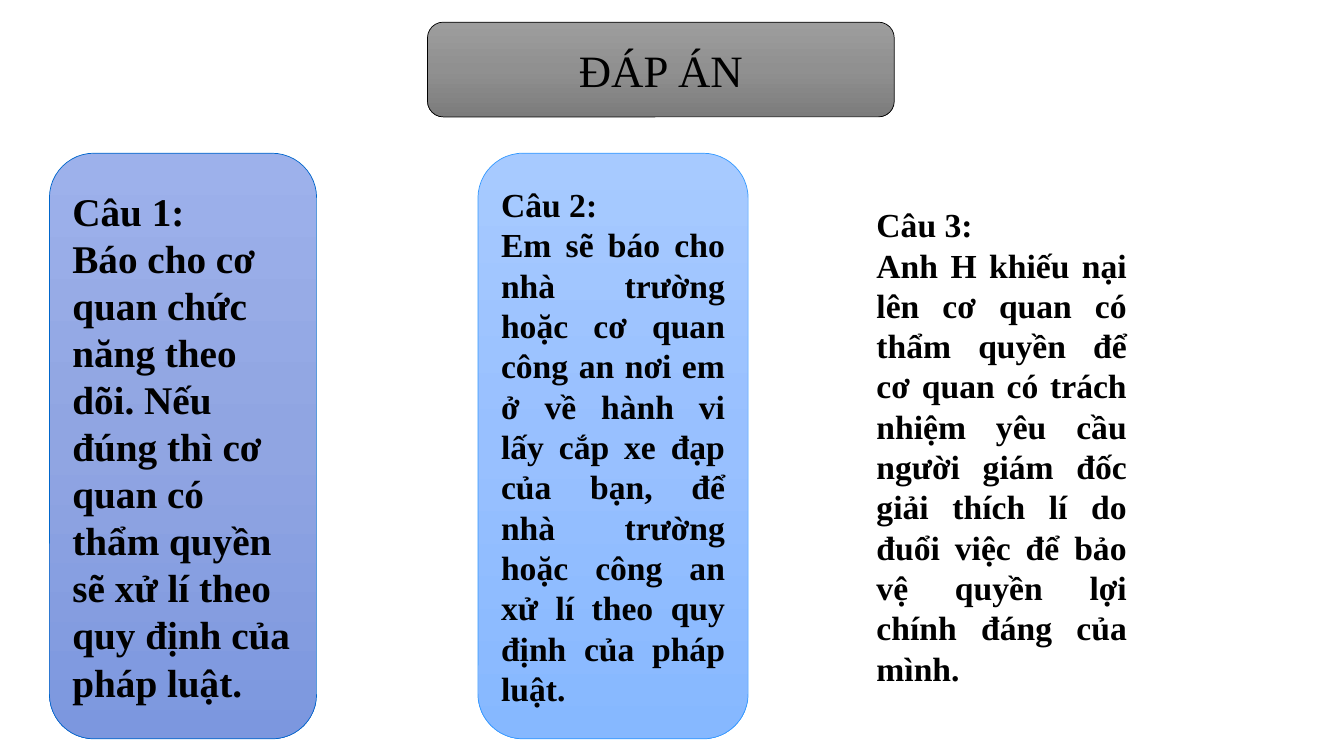
from copy import deepcopy

from pptx import Presentation
from pptx.dml.color import RGBColor
from pptx.enum.shapes import MSO_SHAPE
from pptx.enum.text import MSO_ANCHOR, PP_ALIGN
from pptx.oxml.ns import qn
from pptx.util import Inches, Pt

SLIDE_WIDTH, SLIDE_HEIGHT = 13.33, 7.5
FONT = "Times New Roman"
COLORS = {
    "text": "000000",
    "title": ("9D9D9D", "909090", "7C7C7C"),
    "title_line": "000000",
    "indigo": ("9DB1EB", "90A5E2", "7C97DF"),
    "indigo_line": "0066CC",
    "sky": ("A7CAFF", "98C0FF", "86B8FF"),
    "sky_line": "3399FF",
    "white": ("FFFFFF",),
    "white_line": "FFFFFF",
}
CARD_TOP, CARD_HEIGHT = 1.52, 5.81

# left, width, palette, size, alignment, heading, answer
ANSWERS = [
    (0.49, 2.65, "indigo", 28, PP_ALIGN.LEFT, "Câu 1:",
     "Báo cho cơ quan chức năng theo dõi. Nếu đúng thì cơ quan có thẩm quyền "
     "sẽ xử lí theo quy định của pháp luật."),
    (4.74, 2.68, "sky", 24, PP_ALIGN.JUSTIFY, "Câu 2:",
     "Em sẽ báo cho nhà trường hoặc cơ quan công an nơi em ở về hành vi lấy cắp "
     "xe đạp của bạn, để nhà trường hoặc công an xử lí theo quy định của pháp luật."),
    (8.45, 2.97, "white", 24, PP_ALIGN.JUSTIFY, "Câu 3:",
     "Anh H khiếu nại lên cơ quan có thẩm quyền để cơ quan có trách nhiệm yêu cầu "
     "người giám đốc giải thích lí do đuổi việc để bảo vệ quyền lợi chính đáng của mình."),
]


def paint(shape, shades):
    """Fill with one solid shade, or with three shades running downwards."""
    fill = shape.fill
    if len(shades) == 1:
        fill.solid()
        fill.fore_color.rgb = RGBColor.from_string(shades[0])
        return
    fill.gradient()
    fill.gradient_angle = 270
    stop_list = next(shape.element.iter(qn("a:gsLst")))
    stop_list.insert(1, deepcopy(stop_list[0]))
    for stop, position, shade in zip(fill.gradient_stops, (0, 0.5, 1), shades):
        stop.position = position
        stop.color.rgb = RGBColor.from_string(shade)


def write(shape, paragraphs, size, align, bold=False):
    frame = shape.text_frame
    frame.word_wrap = True
    frame.vertical_anchor = MSO_ANCHOR.MIDDLE
    frame.text = "\n".join(paragraphs)
    for paragraph in frame.paragraphs:
        paragraph.alignment = align
        for run in paragraph.runs:
            run.font.name = FONT
            run.font.size = Pt(size)
            run.font.bold = bold
            run.font.color.rgb = RGBColor.from_string(COLORS["text"])


def rounded_panel(slide, box, palette):
    panel = slide.shapes.add_shape(MSO_SHAPE.ROUNDED_RECTANGLE, *map(Inches, box))
    panel.shadow.inherit = False
    paint(panel, COLORS[palette])
    panel.line.color.rgb = RGBColor.from_string(COLORS[f"{palette}_line"])
    panel.line.width = Pt(0.5)
    return panel


def add_title(slide, box):
    write(rounded_panel(slide, box, "title"), ["ĐÁP ÁN"], 32, PP_ALIGN.CENTER)


def add_answer(slide, box, palette, size, align, heading, answer):
    card = rounded_panel(slide, box, palette)
    write(card, [heading, answer], size, align, bold=True)


def main():
    deck = Presentation()
    deck.slide_width, deck.slide_height = Inches(SLIDE_WIDTH), Inches(SLIDE_HEIGHT)
    slide = deck.slides.add_slide(deck.slide_layouts[6])
    add_title(slide, (4.24, 0.22, 4.63, 0.94))
    for left, width, *content in ANSWERS:
        add_answer(slide, (left, CARD_TOP, width, CARD_HEIGHT), *content)
    deck.save("out.pptx")


if __name__ == "__main__":
    main()
